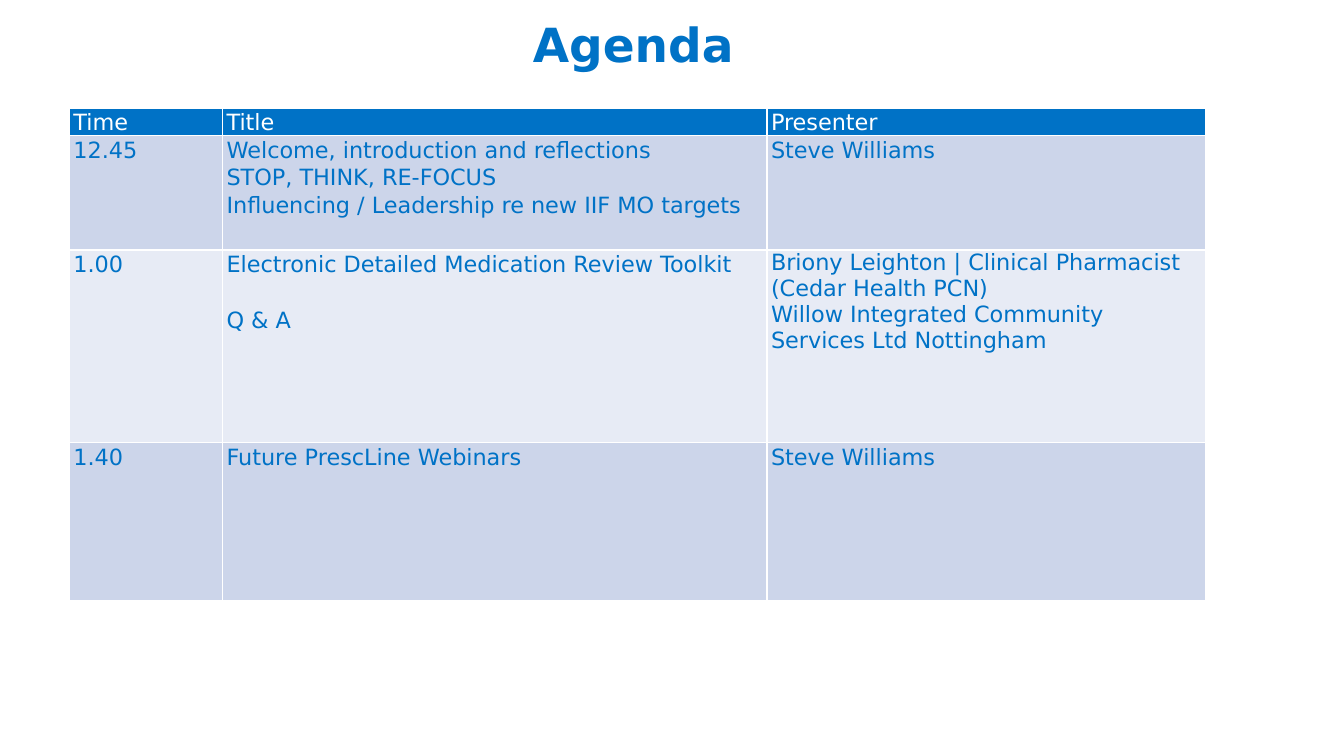
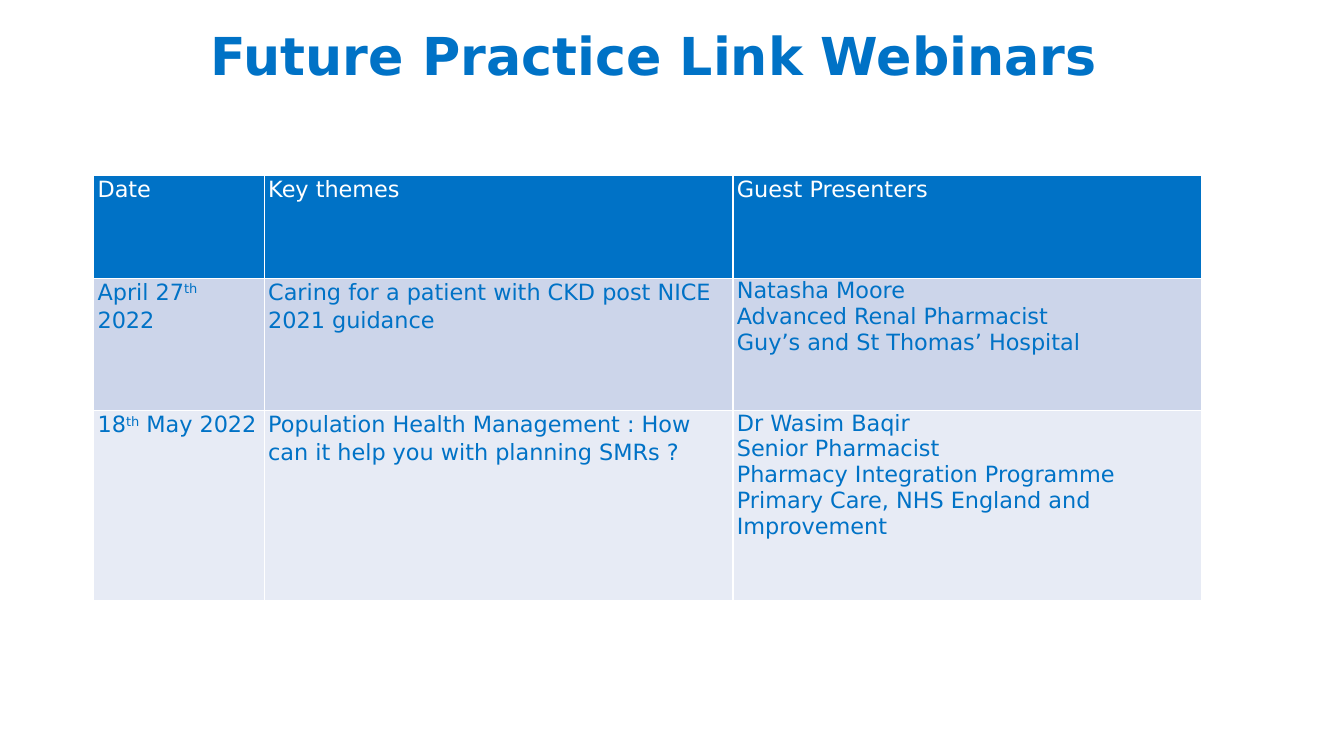
from pptx import Presentation
from pptx.util import Cm, Pt
from pptx.dml.color import RGBColor
from pptx.enum import text

COLORS = {"blue": "0072C6", "white": "FFFFFF", "odd": "CCD5EA", "even": "E7EBF5"}
FONT = "DejaVu Sans"
BODY_SIZE = 16
LINE_SPACING = 1.07
TITLE_ONLY = 5

SLIDES = [
    {
        "title": "Agenda",
        "title_size": 33.6,
        "title_box": (8.46, 0.91, 15, 1.04),
        "table_at": (1.75, 2.72),
        "columns": (3.86, 13.72, 11.05),
        "heights": (0.7, 2.88, 4.86, 3.98),
        "gap_before": {"Q & A": 20},
        "rows": [
            (["Time"], ["Title"], ["Presenter"]),
            (["12.45"],
             ["Welcome, introduction and reflections", "STOP, THINK, RE-FOCUS",
              "Influencing / Leadership re new IIF MO targets"],
             ["Steve Williams"]),
            (["1.00"],
             ["Electronic Detailed Medication Review Toolkit", "Q & A"],
             ["Briony Leighton | Clinical Pharmacist (Cedar Health PCN)",
              "Willow Integrated Community Services Ltd Nottingham"]),
            (["1.40"], ["Future PrescLine Webinars"], ["Steve Williams"]),
        ],
    },
    {
        "title": "Future Practice Link Webinars",
        "title_size": 37.3,
        "title_box": (2.36, 0.38, 28.24, 1.93),
        "table_at": (2.36, 4.42),
        "columns": (4.3, 11.81, 11.81),
        "heights": (2.59, 3.33, 4.8),
        "gap_before": {},
        "rows": [
            (["Date"], ["Key themes"], ["Guest Presenters"]),
            (["April 27^th^ 2022"],
             ["Caring for a patient with CKD post NICE 2021 guidance"],
             ["Natasha Moore", "Advanced Renal Pharmacist",
              "Guy’s and St Thomas’ Hospital"]),
            (["18^th^ May 2022"],
             ["Population Health Management : How can it help you with planning SMRs ?"],
             ["Dr Wasim Baqir", "Senior Pharmacist", "Pharmacy Integration Programme",
              "Primary Care, NHS England and Improvement"]),
        ],
    },
]


def set_font(font, size, color, bold=False):
    font.name = FONT
    font.size = Pt(size)
    font.bold = bold
    font.color.rgb = RGBColor.from_string(COLORS[color])


def add_title(slide, content):
    title = slide.shapes.title
    title.left, title.top, title.width, title.height = map(Cm, content["title_box"])
    frame = title.text_frame
    frame.text = content["title"]
    frame.auto_size = text.MSO_AUTO_SIZE.NONE
    frame.word_wrap = True
    frame.vertical_anchor = text.MSO_ANCHOR.BOTTOM
    paragraph = frame.paragraphs[0]
    paragraph.alignment = text.PP_ALIGN.CENTER
    paragraph.line_spacing = 0.9
    set_font(paragraph.font, content["title_size"], "blue", bold=True)


def fill_cell(cell, lines, fill, color, spacing, gaps):
    cell.fill.solid()
    cell.fill.fore_color.rgb = RGBColor.from_string(COLORS[fill])
    cell.margin_left = cell.margin_right = Cm(0.1)
    cell.margin_top = cell.margin_bottom = 0
    frame = cell.text_frame
    for index, line in enumerate(lines):
        paragraph = frame.add_paragraph() if index else frame.paragraphs[0]
        paragraph.line_spacing = spacing
        if line in gaps:
            paragraph.space_before = Pt(gaps[line])
        set_font(paragraph.font, BODY_SIZE, color)
        for part, words in enumerate(line.split("^")):
            run = paragraph.add_run()
            run.text = words
            if part % 2:
                run._r.get_or_add_rPr().set("baseline", "30000")


def add_table(slide, content):
    rows, columns, heights = content["rows"], content["columns"], content["heights"]
    left, top = content["table_at"]
    table = slide.shapes.add_table(
        len(rows), len(columns), Cm(left), Cm(top), Cm(sum(columns)), Cm(sum(heights))
    ).table
    for column, width in zip(table.columns, columns):
        column.width = Cm(width)
    for row, height in zip(table.rows, heights):
        row.height = Cm(height)
    for row_index, row in enumerate(rows):
        fill = ("odd" if row_index % 2 else "even") if row_index else "blue"
        color = "blue" if row_index else "white"
        for column_index, lines in enumerate(row):
            is_presenter_block = column_index == len(columns) - 1 and len(lines) > 1
            spacing = 1.0 if is_presenter_block else LINE_SPACING
            fill_cell(table.cell(row_index, column_index), lines, fill, color,
                      spacing, content["gap_before"])


def main():
    presentation = Presentation()
    presentation.slide_width = Cm(33.87)
    presentation.slide_height = Cm(19.05)
    for content in SLIDES:
        slide = presentation.slides.add_slide(presentation.slide_layouts[TITLE_ONLY])
        add_title(slide, content)
        add_table(slide, content)
    presentation.save("out.pptx")


if __name__ == "__main__":
    main()
